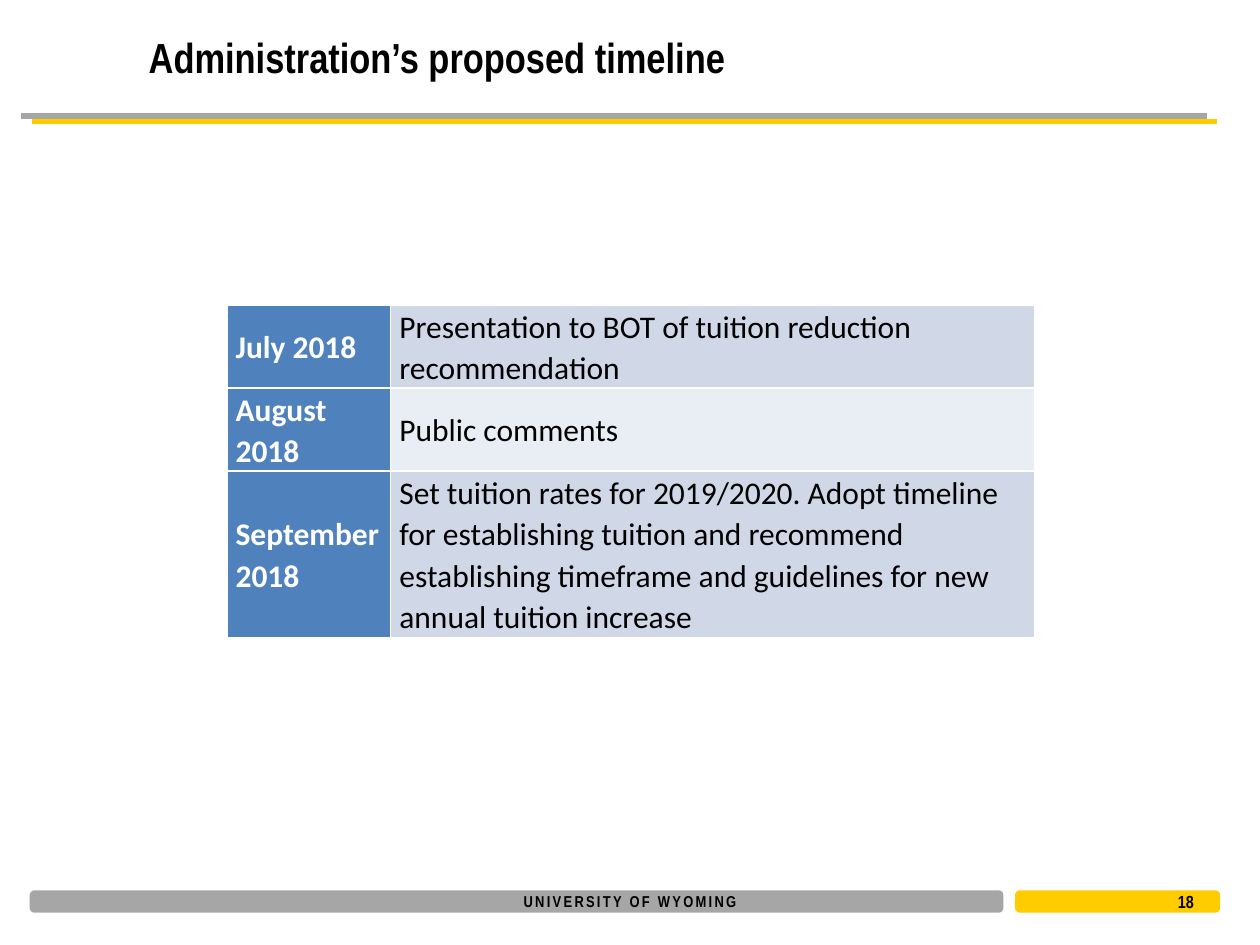
from pptx import Presentation
from pptx.dml.color import RGBColor
from pptx.enum.shapes import MSO_CONNECTOR as Connector, MSO_SHAPE as Shape
from pptx.enum.text import MSO_ANCHOR as Anchor, PP_ALIGN as Align
from pptx.oxml import parse_xml
from pptx.oxml.ns import nsdecls
from pptx.util import Inches, Pt

TITLE = "Administration’s proposed timeline"
FOOTER = "UNIVERSITY OF WYOMING"
PAGE_NUMBER = "18"
TIMELINE = [
    ("July 2018", "Presentation to BOT of tuition reduction recommendation", 2),
    ("August 2018", "Public comments", 2),
    ("September 2018", "Set tuition rates for 2019/2020. Adopt timeline for "
     "establishing tuition and recommend establishing timeframe and "
     "guidelines for new annual tuition increase", 4),
]

BLACK = RGBColor(0, 0, 0)
WHITE = RGBColor(255, 255, 255)
GREY = RGBColor(0xA6, 0xA6, 0xA6)
GOLD = RGBColor(0xFF, 0xCC, 0x00)
BLUE = RGBColor(0x4F, 0x81, 0xBD)
BANDS = [RGBColor(0xD0, 0xD8, 0xE8), RGBColor(0xE9, 0xED, 0xF4)]

BARS = [(0.25, 7.7, GREY), (8.07, 1.6, GOLD)]
BAR_TOP, BAR_HEIGHT = 7.08, 0.15
COLUMNS = [1.3, 5.11]
LINE_HEIGHT = 0.33


def inches(*lengths):
    return [Inches(length) for length in lengths]


def style(para, size, color, bold=True, name="Arial Narrow"):
    for span in para.runs:
        font = span.font
        font.name, font.size, font.bold = name, Pt(size), bold
        font.color.rgb = color


def add_rule(page):
    rule = page.shapes.add_connector(Connector.STRAIGHT, *inches(0.17, 0.92, 9.58, 0.92))
    rule.line.color.rgb = GREY
    rule.line.width = Pt(3)
    rule._element.spPr.append(parse_xml(
        f'<a:effectLst {nsdecls("a")}><a:outerShdw blurRad="0" dist="{Pt(6.7)}" '
        f'dir="{27 * 60000}" algn="ctr" rotWithShape="0">'
        f'<a:srgbClr val="{GOLD}"/></a:outerShdw></a:effectLst>'))


def add_bar(page, left, width, color):
    bar = page.shapes.add_shape(
        Shape.ROUNDED_RECTANGLE, *inches(left, BAR_TOP, width, BAR_HEIGHT))
    bar.shadow.inherit = False
    bar.fill.solid()
    bar.fill.fore_color.rgb = color
    bar.line.color.rgb = color
    bar.line.width = Pt(2)


def add_label(page, text, place, size, align, margin):
    frame = page.shapes.add_textbox(*inches(*place)).text_frame
    frame.word_wrap = False
    frame.margin_left = frame.margin_right = Inches(margin)
    frame.vertical_anchor = Anchor.MIDDLE
    frame.text = text
    para = frame.paragraphs[0]
    para.alignment = align
    style(para, size, BLACK)
    return para


def fill_cell(cell, text, fill, color, bold):
    cell.text = text
    cell.vertical_anchor = Anchor.MIDDLE
    cell.margin_left = cell.margin_right = Inches(0.07)
    cell.margin_top = cell.margin_bottom = 0
    para = cell.text_frame.paragraphs[0]
    para.line_spacing = 1.07
    style(para, 18, color, bold, "Calibri")
    for side in "LRTB":
        cell._tc.get_or_add_tcPr().append(parse_xml(
            f'<a:ln{side} {nsdecls("a")} w="{Pt(1)}"><a:solidFill>'
            f'<a:srgbClr val="{WHITE}"/></a:solidFill></a:ln{side}>'))
    cell.fill.solid()
    cell.fill.fore_color.rgb = fill


def add_timeline(page):
    height = LINE_HEIGHT * sum(lines for _, _, lines in TIMELINE)
    place = inches(1.8, 2.42, sum(COLUMNS), height)
    table = page.shapes.add_table(len(TIMELINE), len(COLUMNS), *place).table
    table.first_row = False
    table.first_col = True
    for column, width in zip(table.columns, COLUMNS):
        column.width = Inches(width)
    for index, (date, step, lines) in enumerate(TIMELINE):
        table.rows[index].height = Inches(LINE_HEIGHT * lines)
        fill_cell(table.cell(index, 0), date, BLUE, WHITE, True)
        fill_cell(table.cell(index, 1), step, BANDS[index % 2], BLACK, False)


def main():
    """Build the timeline slide."""
    deck = Presentation()
    deck.slide_width, deck.slide_height = inches(10, 7.5)
    page = deck.slides.add_slide(deck.slide_layouts[5])

    add_rule(page)
    for bar in BARS:
        add_bar(page, *bar)
    footer = add_label(page, FOOTER, (4, 7.03, 2, 0.25), 9, Align.CENTER, 0)
    footer.runs[0].font._element.set("spc", "130")

    title = page.shapes.title
    title.left, title.top, title.width, title.height = inches(1.08, 0.15, 8.75, 0.6)
    title.text_frame.text = TITLE
    title.text_frame.vertical_anchor = Anchor.MIDDLE
    title.text_frame.paragraphs[0].alignment = Align.LEFT
    style(title.text_frame.paragraphs[0], 24, BLACK)

    add_timeline(page)
    add_label(page, PAGE_NUMBER, (9.25, 7.06, 0.5, 0.19), 10, Align.LEFT, 0.1)
    deck.save("out.pptx")


if __name__ == "__main__":
    main()
